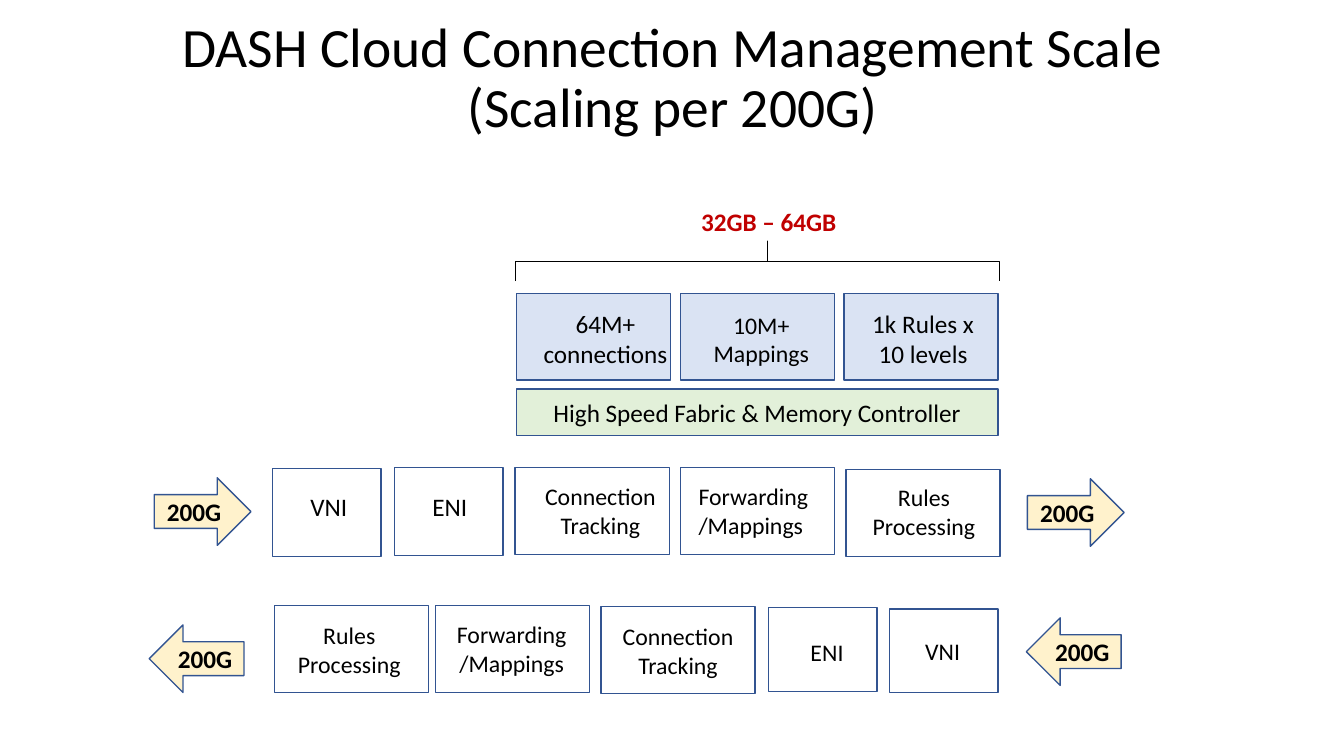
from dataclasses import dataclass

from pptx import Presentation
from pptx.dml.color import RGBColor
from pptx.enum.shapes import MSO_SHAPE
from pptx.enum.text import MSO_ANCHOR, MSO_AUTO_SIZE, PP_ALIGN
from pptx.util import Inches, Pt

RECT, BRACE = MSO_SHAPE.RECTANGLE, MSO_SHAPE.RIGHT_BRACE
RIGHT, LEFT = MSO_SHAPE.RIGHT_ARROW, MSO_SHAPE.LEFT_ARROW
ALIGN_L, ALIGN_C = PP_ALIGN.LEFT, PP_ALIGN.CENTER
TOP, MIDDLE = MSO_ANCHOR.TOP, MSO_ANCHOR.MIDDLE
NO_FIT, GROW = MSO_AUTO_SIZE.NONE, MSO_AUTO_SIZE.SHAPE_TO_FIT_TEXT


@dataclass(frozen=True)
class Theme:
    font: str = "Calibri"
    title: float = 39.6
    body: float = 18
    small: float = 17
    ink: str = "000000"
    accent: str = "C00000"
    outline: str = "325491"
    memory: str = "DAE3F3"
    fabric: str = "E2F0D9"
    traffic: str = "FFF2CC"


def write_text(tf, text, *, theme, size, color=None, bold=False,
               align=ALIGN_C, anchor=TOP, spacing=None):
    """Fill a frame: newline starts a paragraph, vertical tab a line break."""
    tf.word_wrap = True
    tf.vertical_anchor = anchor
    tf.text = text
    for p in tf.paragraphs:
        p.alignment = align
        if spacing:
            p.line_spacing = spacing
        for r in p.runs:
            r.font.name, r.font.size, r.font.bold = theme.font, Pt(size), bold
            r.font.color.rgb = RGBColor.from_string(color or theme.ink)


class Deck:
    def __init__(self, prs, theme):
        self.theme = theme
        self.s = prs.slides.add_slide(prs.slide_layouts[5])

    def title(self, text, at):
        sp = self.s.shapes.title
        sp.left, sp.top, sp.width, sp.height = map(Inches, at)
        write_text(sp.text_frame, text, theme=self.theme, size=self.theme.title,
                   anchor=MIDDLE, spacing=0.9)
        sp.text_frame.auto_size = NO_FIT

    def shape(self, kind, at, fill=None, line=None, weight=1):
        sp = self.s.shapes.add_shape(kind, *map(Inches, at))
        sp.shadow.inherit = False
        if fill:
            sp.fill.solid()
            sp.fill.fore_color.rgb = RGBColor.from_string(fill)
        else:
            sp.fill.background()
        sp.line.color.rgb = RGBColor.from_string(line or self.theme.outline)
        sp.line.width = Pt(weight)
        return sp

    def filled(self, kind, at, text, fill, bold=False):
        sp = self.shape(kind, at, fill)
        write_text(sp.text_frame, text, theme=self.theme, size=self.theme.body,
                   bold=bold, anchor=MIDDLE)

    def label(self, text, at, size, **fmt):
        sp = self.s.shapes.add_textbox(*map(Inches, at))
        write_text(sp.text_frame, text, theme=self.theme, size=size, **fmt)
        sp.text_frame.auto_size = GROW

    def block(self, box, text, label_at, size, fill=None, align=ALIGN_C):
        self.shape(RECT, box, fill)
        self.label(text, label_at, size, align=align)

    def brace(self, at, point):
        sp = self.shape(BRACE, at, line=self.theme.ink, weight=0.5)
        sp.rotation = 270
        sp.adjustments[0], sp.adjustments[1] = 0, point


def main():
    prs = Presentation()
    prs.slide_width, prs.slide_height = Inches(13.33), Inches(7.5)
    t = Theme()
    d = Deck(prs, t)
    wide, tall, narrow = 1.53, 0.86, 1.08

    d.title("DASH Cloud Connection Management Scale\v(Scaling per 200G)",
            (0.92, 0.13, 11.5, 1.32))

    # Memory size and its bracket
    d.brace((7.31, 0.19, 0.4, 4.8), 0.522)
    d.label("32GB – 64GB", (6.7, 2, 1.85, 0.4), t.body, color=t.accent, bold=True)

    # Tables held in memory, above the fabric bar
    for x, text, label_at, size in (
        (5.12, "64M+ connections", (5.27, 3.01, 1.47, 0.71), t.body),
        (6.75, "10M+\nMappings", (6.94, 3.03, 1.22, 0.67), t.small),
        (8.37, "1k Rules x 10 levels", (8.48, 3.01, 1.35, 0.71), t.body),
    ):
        d.block((x, 2.91, wide, tall), text, label_at, size, t.memory)
    d.filled(RECT, (5.12, 3.86, 4.78, 0.46),
             "High Speed Fabric & Memory Controller", t.fabric)

    # Wide stages of both pipelines: box corner, text, label place
    for x, y, text, label_x, label_y, align in (
        (5.11, 4.64, "Connection\nTracking", 5.27, 4.73, ALIGN_C),
        (6.75, 4.64, "Forwarding/Mappings", 6.83, 4.73, ALIGN_L),
        (8.39, 4.66, "Rules Processing", 8.48, 4.74, ALIGN_C),
        (2.72, 6.01, "Rules\nProcessing", 2.78, 6.11, ALIGN_C),
        (4.32, 6.01, "Forwarding\n/Mappings", 4.39, 6.1, ALIGN_C),
        (5.96, 6.02, "Connection\nTracking", 6.04, 6.12, ALIGN_C),
    ):
        d.block((x, y, wide, tall), text, (label_x, label_y, 1.37, 0.67),
                t.small, align=align)

    # Narrow stages of both pipelines
    for x, y, h, text, label_at, size, align in (
        (2.7, 4.65, 0.87, "VNI", (2.98, 4.83, 0.69, 0.5), t.body, ALIGN_L),
        (3.91, 4.64, 0.87, "ENI", (4.19, 4.83, 0.69, 0.5), t.body, ALIGN_L),
        (7.62, 6.03, 0.83, "ENI", (7.94, 6.28, 0.61, 0.39), t.small, ALIGN_L),
        (8.82, 6.04, 0.83, "VNI", (8.67, 6.27, 1.36, 0.39), t.small, ALIGN_C),
    ):
        d.block((x, y, narrow, h), text, label_at, size, align=align)

    # Traffic in and out
    for kind, x, y, w in ((RIGHT, 1.53, 4.74, 0.96), (RIGHT, 10.19, 4.75, 0.96),
                          (LEFT, 1.48, 6.2, 0.94), (LEFT, 10.18, 6.13, 0.94)):
        d.filled(kind, (x, y, w, 0.67), "200G", t.traffic, bold=True)

    prs.save("out.pptx")


if __name__ == "__main__":
    main()
